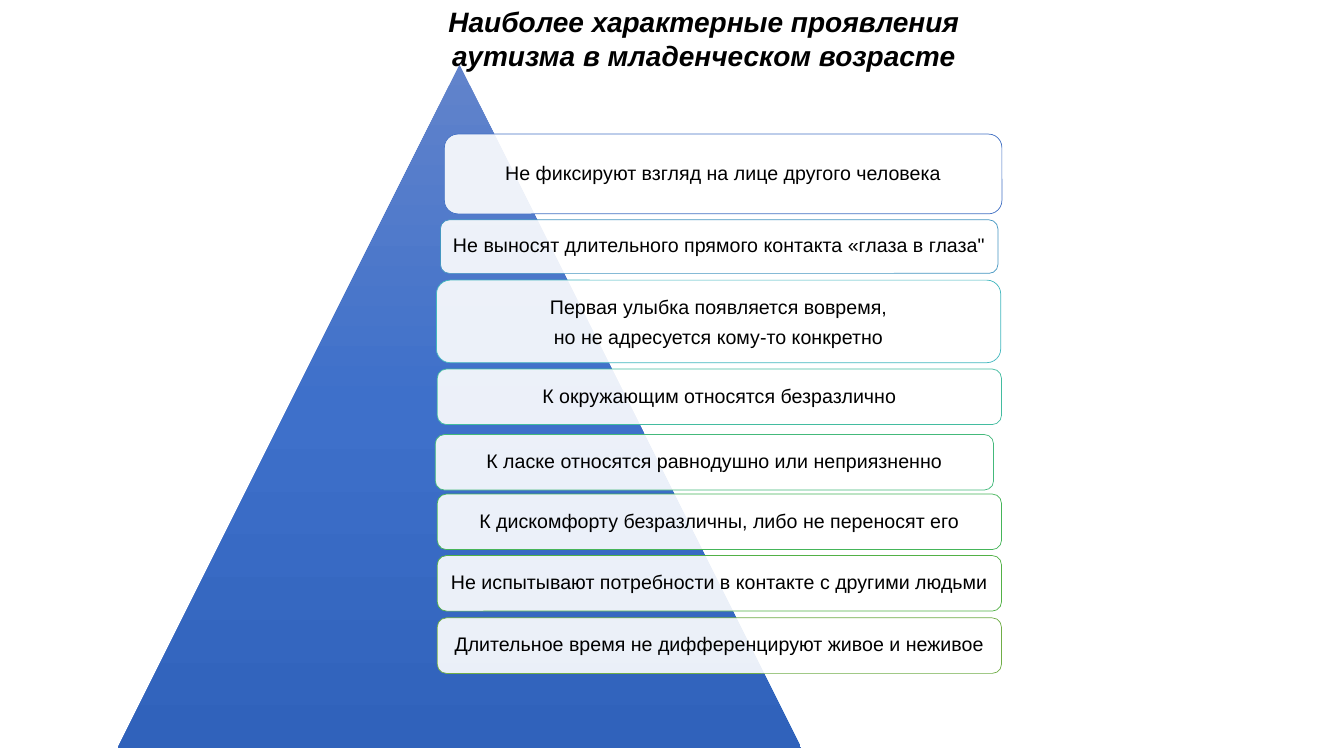
from copy import deepcopy

from lxml.etree import SubElement, fromstring
from pptx import Presentation
from pptx.dml.color import RGBColor
from pptx.enum.shapes import MSO_SHAPE
from pptx.enum.text import MSO_ANCHOR, MSO_AUTO_SIZE, PP_ALIGN
from pptx.oxml.ns import nsdecls, qn
from pptx.util import Cm, Pt

TITLE = ["Наиболее характерные проявления", "аутизма в младенческом возрасте"]

# Each sign: left, top, width, height in cm, outline colour, lines of text
SIGNS = [
    (11.2, 3.38, 14.05, 2.01, "4472C4", ["Не фиксируют взгляд на лице другого человека"]),
    (11.1, 5.54, 14.05, 1.35, "4496C1",
     ["Не выносят длительного прямого контакта «глаза в глаза\""]),
    (11.0, 7.06, 14.22, 2.08, "43B8BF",
     ["Первая улыбка появляется вовремя,", "но не адресуется кому-то конкретно"]),
    (11.02, 9.3, 14.22, 1.4, "43BCA0", ["К окружающим относятся безразлично"]),
    (10.97, 10.95, 14.07, 1.4, "44B97B", ["К ласке относятся равнодушно или неприязненно"]),
    (11.02, 12.45, 14.22, 1.4, "45B559",
     ["К дискомфорту безразличны, либо не переносят его"]),
    (11.02, 14.0, 14.22, 1.4, "52B146",
     ["Не испытывают потребности в контакте с другими людьми"]),
    (11.02, 15.57, 14.22, 1.4, "70AD47",
     ["Длительное время не дифференцируют живое и неживое"]),
]


def color(value):
    return RGBColor.from_string(value)


def apply(target, values):
    for name, value in values.items():
        setattr(target, name, value)


class SlideBuilder:
    title_font = {"name": "Arial", "size": Pt(20), "bold": True, "italic": True}
    sign_font = {"name": "Arial", "size": Pt(14)}
    sign_frame = {"word_wrap": True, "vertical_anchor": MSO_ANCHOR.MIDDLE,
                  "margin_left": Cm(0.15), "margin_right": Cm(0.15),
                  "margin_top": Cm(0.15), "margin_bottom": Cm(0.15)}

    def __init__(self, slide):
        self.slide = slide

    def shape(self, kind, left, top, width, height):
        shape = self.slide.shapes.add_shape(kind, Cm(left), Cm(top), Cm(width), Cm(height))
        shape.shadow.inherit = False
        return shape

    def text_lines(self, frame, lines, font, line_spacing=1.0, gap=0):
        for index, line in enumerate(lines):
            paragraph = frame.paragraphs[0] if index == 0 else frame.add_paragraph()
            apply(paragraph, {"alignment": PP_ALIGN.CENTER, "line_spacing": line_spacing,
                              "space_before": Pt(gap if index else 0)})
            run = paragraph.add_run()
            run.text = line
            apply(run.font, font)
            run.font.color.rgb = color("000000")

    def pyramid(self, left, top, size, colors):
        shape = self.shape(MSO_SHAPE.ISOSCELES_TRIANGLE, left, top, size, size)
        shape.line.fill.background()
        fill = shape.fill
        fill.gradient()
        fill.gradient_angle = 270
        # A gradient starts with two stops; the middle one is added
        stops = shape._element.spPr.find(qn("a:gradFill")).find(qn("a:gsLst"))
        stops.insert(1, deepcopy(stops[0]))
        for index, (stop, value) in enumerate(zip(fill.gradient_stops, colors)):
            stop.color.rgb = color(value)
            stop.position = index / (len(colors) - 1)

    def sign(self, left, top, width, height, outline, lines):
        shape = self.shape(MSO_SHAPE.ROUNDED_RECTANGLE, left, top, width, height)
        shape.fill.solid()
        shape.fill.fore_color.rgb = color("FFFFFF")
        solid = shape._element.spPr.find(qn("a:solidFill"))
        SubElement(solid[0], qn("a:alpha"), val="90000")
        shape.line.color.rgb = color(outline)
        shape.line.width = Pt(0.5)
        apply(shape.text_frame, self.sign_frame)
        spacing = 0.9 if len(lines) == 1 else 1.0
        self.text_lines(shape.text_frame, lines, self.sign_font, spacing, gap=4.9)

    def title(self, left, top, width, height, lines):
        box = self.slide.shapes.add_textbox(Cm(left), Cm(top), Cm(width), Cm(height))
        frame = box.text_frame
        apply(frame, {"word_wrap": True, "auto_size": MSO_AUTO_SIZE.SHAPE_TO_FIT_TEXT})
        self.text_lines(frame, lines, self.title_font)
        # Soft shadow behind the letters
        for paragraph in frame.paragraphs:
            fill = paragraph.runs[0]._r.rPr.find(qn("a:solidFill"))
            fill.addnext(fromstring(
                f'<a:effectLst {nsdecls("a")}><a:outerShdw blurRad="38100" dist="38100" '
                'dir="2700000" algn="tl"><a:srgbClr val="C0C0C0"/></a:outerShdw></a:effectLst>'))


def main():
    presentation = Presentation()
    apply(presentation, {"slide_width": Cm(33.87), "slide_height": Cm(19.05)})
    builder = SlideBuilder(presentation.slides.add_slide(presentation.slide_layouts[6]))

    # Pyramid behind the list
    builder.pyramid(2.97, 1.63, 17.22, ["6183CB", "3E70CA", "3062BB"])

    # List of signs
    for sign in SIGNS:
        builder.sign(*sign)

    # Heading
    builder.title(7.72, 0, 20.04, 1.96, TITLE)
    presentation.save("out.pptx")


if __name__ == "__main__":
    main()
